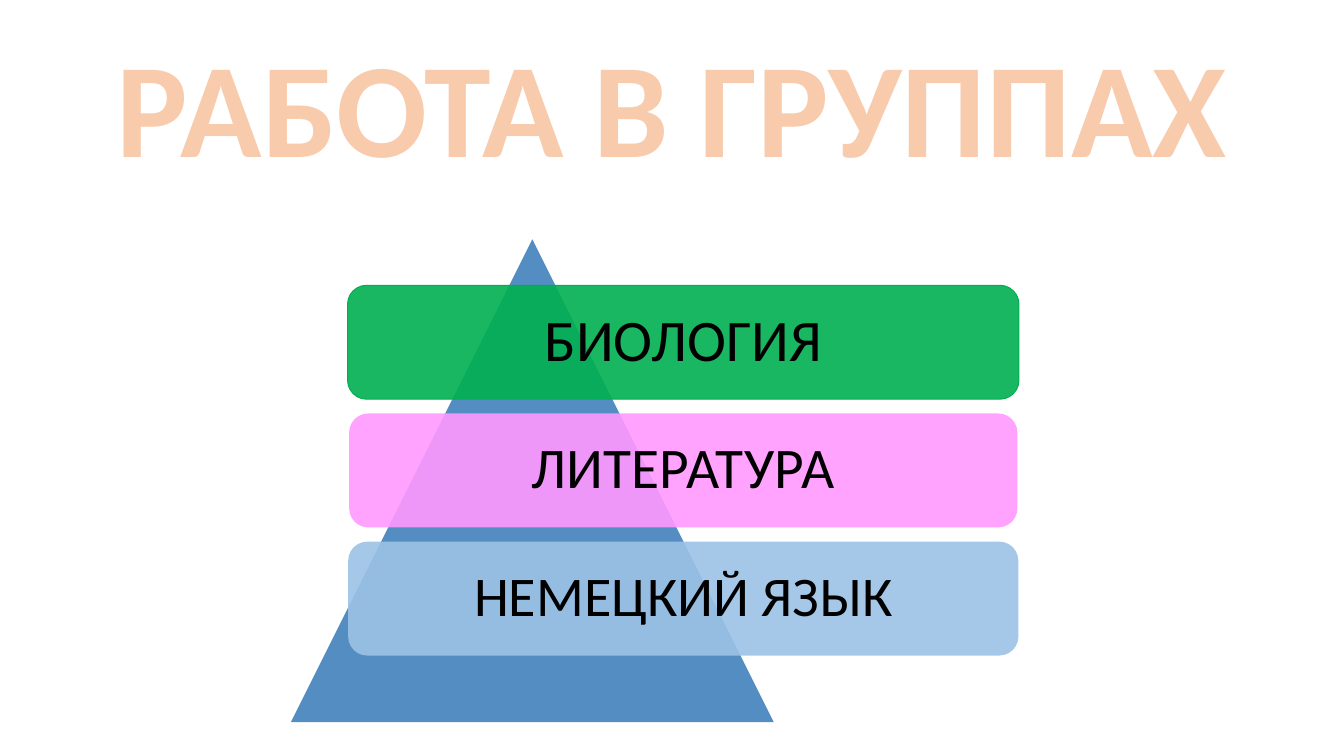
from dataclasses import dataclass

from lxml import etree
from pptx import Presentation
from pptx import util as u
from pptx.dml.color import RGBColor
from pptx.enum import shapes, text
from pptx.oxml.ns import qn


@dataclass(frozen=True)
class Theme:
    font: str = "Calibri"
    title_fill: str = "F8CBAD"
    title_outline: str = "ED7D31"
    title_size: int = 96
    pyramid: str = "538DC1"
    ink: str = "000000"
    biology: str = "00B050"
    literature: str = "FF99FF"
    german: str = "9DC3E6"
    card_sizes: tuple = (42, 41, 40)
    card_opacity: int = 90


def write(frame, wording, *, font, size, color, bold=False):
    """Put one centred line of text in a frame and return its run."""
    frame.word_wrap = True
    frame.vertical_anchor = text.MSO_ANCHOR.MIDDLE
    para = frame.paragraphs[0]
    para.alignment = text.PP_ALIGN.CENTER
    para.line_spacing = 0.9
    span = para.add_run()
    span.text = wording
    span.font.name = font
    span.font.size = u.Pt(size)
    span.font.bold = bold
    span.font.color.rgb = RGBColor.from_string(color)
    return span


class SlideBuilder:
    def __init__(self, page, theme):
        self.page = page
        self.theme = theme

    def title(self, wording, left, top, width, height):
        box = self.page.shapes.title
        box.left, box.top = u.Cm(left), u.Cm(top)
        box.width, box.height = u.Cm(width), u.Cm(height)
        span = write(box.text_frame, wording, font=self.theme.font,
                     size=self.theme.title_size, color=self.theme.title_fill, bold=True)
        box.text_frame.auto_size = text.MSO_AUTO_SIZE.SHAPE_TO_FIT_TEXT
        outline = etree.Element(qn("a:ln"), w=str(u.Pt(1.75)))
        fill = etree.SubElement(outline, qn("a:solidFill"))
        etree.SubElement(fill, qn("a:srgbClr"), val=self.theme.title_outline)
        span.font._element.insert(0, outline)

    def shape(self, kind, left, top, width, height, color):
        box = self.page.shapes.add_shape(
            kind, u.Cm(left), u.Cm(top), u.Cm(width), u.Cm(height))
        box.shadow.inherit = False
        box.fill.solid()
        box.fill.fore_color.rgb = RGBColor.from_string(color)
        box.line.fill.background()
        return box

    def card(self, wording, center, top, width, height, color, size, outlined=False):
        """Add a translucent rounded card around a horizontal centre."""
        box = self.shape(shapes.MSO_SHAPE.ROUNDED_RECTANGLE,
                         center - width / 2, top, width, height, color)
        shade = box.fill._xPr.find(qn("a:solidFill"))[0]
        etree.SubElement(shade, qn("a:alpha"), val=str(self.theme.card_opacity * 1000))
        if outlined:
            box.line.color.rgb = RGBColor.from_string(color)
            box.line.width = u.Pt(0.75)
        write(box.text_frame, wording, font=self.theme.font, size=size,
              color=self.theme.ink)


def main():
    theme = Theme()
    deck = Presentation()
    deck.slide_width, deck.slide_height = u.Cm(33.87), u.Cm(19.05)
    slide = SlideBuilder(deck.slides.add_slide(deck.slide_layouts[5]), theme)

    slide.title("РАБОТА В ГРУППАХ", 2.33, 0.89, 29.21, 3.96)
    slide.shape(shapes.MSO_SHAPE.ISOSCELES_TRIANGLE, 7.33, 6.03, 12.17, 12.17,
                theme.pyramid)

    subjects = (
        ("БИОЛОГИЯ", 16.92, theme.biology),
        ("ЛИТЕРАТУРА", 16.84, theme.literature),
        ("НЕМЕЦКИЙ ЯЗЫК", 16.89, theme.german),
    )
    first_top, pitch, card_height, center = 7.19, 3.23, 2.87, 17.22
    for row, (wording, width, color) in enumerate(subjects):
        slide.card(wording, center, first_top + row * pitch, width, card_height,
                   color, theme.card_sizes[row], outlined=row == 0)

    deck.save("out.pptx")


if __name__ == "__main__":
    main()
